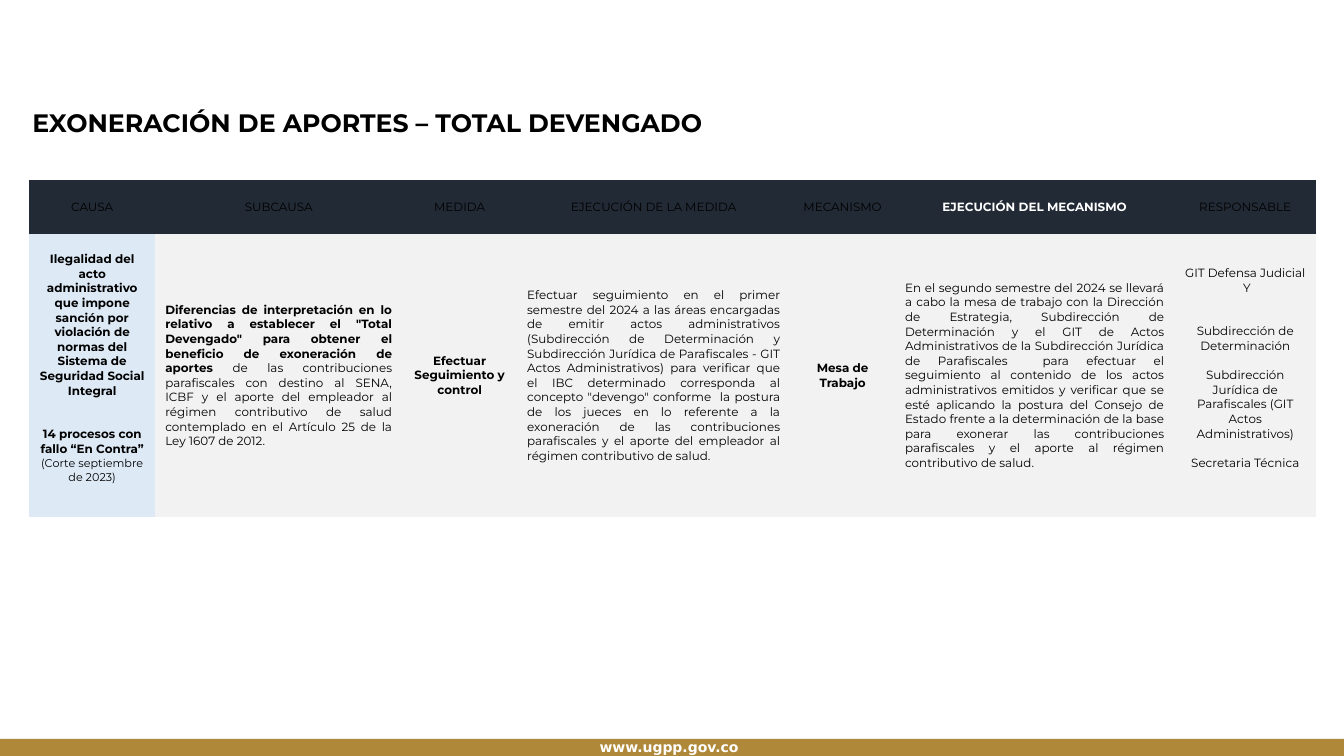
from pptx import Presentation
from pptx.dml.color import RGBColor
from pptx.enum.shapes import MSO_SHAPE as Shape
from pptx.enum.text import MSO_ANCHOR as Anchor, MSO_AUTO_SIZE as AutoSize, PP_ALIGN as Align
from pptx.util import Inches, Pt

NO_GRID_STYLE = "{2D5ABB26-0587-4C30-8999-92F81FD0307C}"
BLACK, WHITE, NAVY, SKY, PALE, GOLD = "000000", "FFFFFF", "222A35", "DDEAF6", "F2F2F2", "AF8839"
LINE = 10.4

HEADINGS = ["CAUSA", "SUBCAUSA", "MEDIDA", "EJECUCIÓN DE LA MEDIDA", "MECANISMO",
            "EJECUCIÓN DEL MECANISMO", "RESPONSABLE"]
CAUSA = [
    ("Ilegalidad del acto administrativo que impone sanción por violación de normas del "
     "Sistema de Seguridad Social Integral", dict(bold=True)),
    ("14 procesos con fallo “En Contra”", dict(bold=True, before=2 * LINE)),
    ("(Corte septiembre de 2023)", dict(size=8)),
]
SUBCAUSA = [
    ("Diferencias de interpretación en lo relativo a establecer el \"Total Devengado\" para "
     "obtener el beneficio de exoneración de aportes ", dict(bold=True, align=Align.JUSTIFY)),
    ("de las contribuciones parafiscales con destino al SENA, ICBF y el aporte del empleador al "
     "régimen contributivo de salud contemplado en el Artículo 25 de la Ley 1607 de 2012.",
     dict(align=Align.JUSTIFY, joined=True)),
]
MEDIDA = [("Efectuar Seguimiento y control", dict(bold=True))]
EJECUCION_MEDIDA = [
    ("Efectuar seguimiento en el primer semestre del 2024 a las áreas encargadas de emitir actos "
     "administrativos (Subdirección de Determinación y Subdirección Jurídica de Parafiscales - GIT "
     "Actos Administrativos) para verificar que el IBC determinado corresponda al concepto "
     "\"devengo\" conforme  la postura de los jueces en lo referente a la exoneración de las "
     "contribuciones parafiscales y el aporte del empleador al régimen contributivo de salud.",
     dict(align=Align.JUSTIFY)),
]
MECANISMO = [("Mesa de Trabajo", dict(bold=True))]
EJECUCION_MECANISMO = [
    ("En el segundo semestre del 2024 se llevará a cabo la mesa de trabajo con la Dirección de "
     "Estrategia, Subdirección de Determinación y el GIT de Actos Administrativos de la "
     "Subdirección Jurídica de Parafiscales  para efectuar el seguimiento al contenido de los "
     "actos administrativos emitidos y verificar que se esté aplicando la postura del Consejo de "
     "Estado frente a la determinación de la base para exonerar las contribuciones parafiscales "
     "y el aporte al régimen contributivo de salud.", dict(align=Align.JUSTIFY)),
]
RESPONSABLE = [
    ("GIT Defensa Judicial  Y", {}),
    ("Subdirección de Determinación", dict(before=2 * LINE)),
    ("Subdirección Jurídica de Parafiscales (GIT Actos Administrativos)", dict(before=LINE)),
    ("Secretaria Técnica", dict(before=LINE)),
]


def rgb(value):
    """Turn a hex string into a colour."""
    return RGBColor.from_string(value)


def write(frame, text, size=8.5, color=BLACK, bold=False, font="Montserrat",
          align=Align.CENTER, before=0, joined=False):
    """Write a formatted run in a new paragraph, or in the last one if joined."""
    paragraph = frame.paragraphs[-1]
    if paragraph.runs and not joined:
        paragraph = frame.add_paragraph()
    paragraph.alignment = align
    paragraph.space_before = Pt(before)
    run = paragraph.add_run()
    run.text = text
    run.font.size, run.font.bold, run.font.name = Pt(size), bold, font
    run.font.color.rgb = rgb(color)


class Board:
    """A slide laid out on a grid of 160 columns and 90 rows."""

    def __init__(self, deck):
        """Set the slide size and open a slide that has only a title."""
        self.unit = Inches(1) / 12
        deck.slide_width, deck.slide_height = self.cells(160, 90)
        self.slide = deck.slides.add_slide(deck.slide_layouts[5])

    def cells(self, *counts):
        """Convert grid counts to lengths."""
        return [round(count * self.unit) for count in counts]

    def title(self, text, *box):
        """Place and fill the title placeholder."""
        heading = self.slide.shapes.title
        heading.left, heading.top, heading.width, heading.height = self.cells(*box)
        frame = heading.text_frame
        frame.word_wrap, frame.vertical_anchor = True, Anchor.TOP
        frame.auto_size = AutoSize.NONE
        write(frame, text, size=18, bold=True, align=Align.LEFT)

    def bar(self, color, *box):
        """Draw a plain filled rectangle."""
        band = self.slide.shapes.add_shape(Shape.RECTANGLE, *self.cells(*box))
        band.shadow.inherit = False
        band.fill.solid()
        band.fill.fore_color.rgb = rgb(color)
        band.line.fill.background()

    def label(self, text, *box, **style):
        """Add a wrapped text box."""
        frame = self.slide.shapes.add_textbox(*self.cells(*box)).text_frame
        frame.word_wrap = True
        write(frame, text, **style)

    def table(self, left, top, widths, heights, rows, fills):
        """Add a table whose cells hold lists of text and format pairs."""
        box = self.cells(left, top, sum(widths), sum(heights))
        grid = self.slide.shapes.add_table(len(rows), len(widths), *box).table
        grid.horz_banding = grid.first_row = False
        grid._tbl.tblPr[0].text = NO_GRID_STYLE
        for column, width in zip(grid.columns, self.cells(*widths)):
            column.width = width
        for row, height, contents, colors in zip(grid.rows, self.cells(*heights), rows, fills):
            row.height = height
            for cell, passages, color in zip(row.cells, contents, colors):
                cell.vertical_anchor = Anchor.MIDDLE
                cell.fill.solid()
                cell.fill.fore_color.rgb = rgb(color)
                if len(passages) > 2:
                    cell.margin_bottom = Inches(0.2)
                for text, style in passages:
                    write(cell.text_frame, text, **style)


def main():
    """Build and save the slide."""
    deck = Presentation()
    board = Board(deck)
    highlight = dict(color=WHITE, bold=True)
    header = [[(name, highlight if name == "EJECUCIÓN DEL MECANISMO" else {})]
              for name in HEADINGS]
    body = [CAUSA, SUBCAUSA, MEDIDA, EJECUCION_MEDIDA, MECANISMO, EJECUCION_MECANISMO, RESPONSABLE]
    board.table(3.48, 21.43, [15, 29.4, 13.68, 32.52, 12.48, 33.24, 16.92], [6.43, 33.72],
                [header, body], [[NAVY] * 7, [SKY] + [PALE] * 6])
    board.title("EXONERACIÓN DE APORTES – TOTAL DEVENGADO", 2.64, 12.12, 138.12, 4.8)
    board.bar(GOLD, 0, 87.96, 160, 2.04)
    board.label("www.ugpp.gov.co", 70.2, 87.36, 24, 3.24, size=10, color=WHITE, bold=True,
                font="DejaVu Sans", align=Align.LEFT)
    deck.save("out.pptx")


if __name__ == "__main__":
    main()
